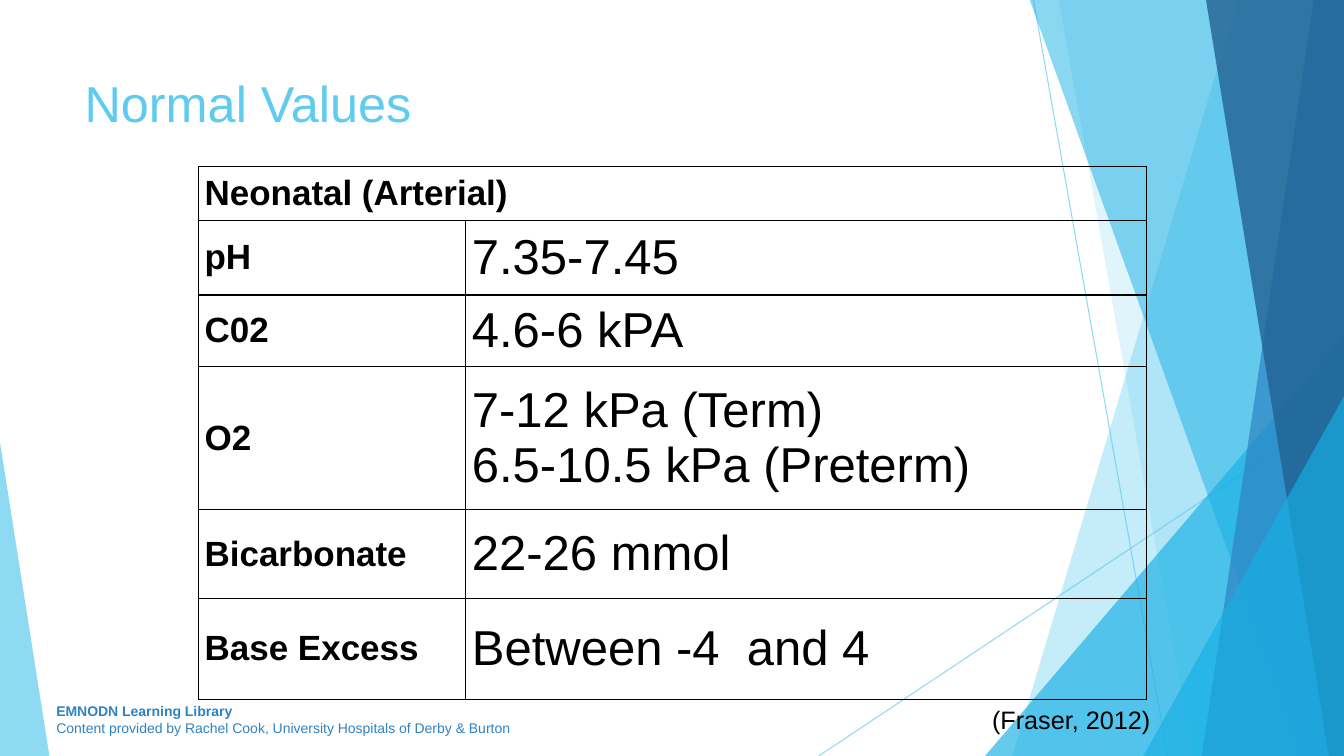
from lxml import etree
from pptx import Presentation
from pptx import util as u
from pptx.dml.color import RGBColor
from pptx.enum import shapes, text
from pptx.oxml import ns

WIDE, HIGH = 13.33, 7.5
SKY, CYAN, BLUE, NAVY, BLACK = "5FCBEF", "17B0E4", "2E83C3", "226292", "000000"
VALUES = [
    ("pH", "7.35-7.45", 0.74),
    ("C02", "4.6-6 kPA", 0.71),
    ("O2", "7-12 kPa (Term)\n6.5-10.5 kPa (Preterm)", 1.42),
    ("Bicarbonate", "22-26 mmol", 0.88),
    ("Base Excess", "Between -4  and 4", 1),
]


def color(code):
    """Turn a hex string into a colour."""
    return RGBColor.from_string(code)


def fade(part, alpha):
    """Make the colour inside a fill or line partly clear."""
    for node in part.iter(ns.qn("a:srgbClr")):
        etree.SubElement(node, ns.qn("a:alpha"), val=str(alpha * 1000))


def paint(shape, code, alpha):
    """Give a shape a partly clear fill without line or shadow."""
    shape.shadow.inherit = False
    shape.fill.solid()
    shape.fill.fore_color.rgb = color(code)
    shape.line.fill.background()
    fade(shape.fill._xPr, alpha)


def ray(slide, start, end):
    """Draw a thin pale line."""
    ends = [u.Inches(v) for v in start + end]
    line = slide.shapes.add_connector(shapes.MSO_CONNECTOR.STRAIGHT, *ends)
    line.line.color.rgb = color(SKY)
    line.line.width = u.Pt(0.75)
    fade(line.line._ln, 70)
    etree.SubElement(line._element.spPr, ns.qn("a:effectLst"))


def facet(slide, top, base, code, alpha):
    """Fill the area from a slanted edge to the right side of the slide."""
    points = [(top, -0.01), (WIDE, -0.01), (WIDE, HIGH), (base, HIGH)]
    points = [(u.Inches(x), u.Inches(y)) for x, y in points]
    form = slide.shapes.build_freeform(*points[0])
    form.add_line_segments(points[1:], close=True)
    paint(form.convert_to_shape(), code, alpha)


def wedge(slide, left, wide, high, tip, code, alpha):
    """Stand a triangle on the lower edge of the slide."""
    box = [u.Inches(v) for v in (left, HIGH - high, wide, high)]
    shape = slide.shapes.add_shape(shapes.MSO_SHAPE.ISOSCELES_TRIANGLE, *box)
    shape.adjustments[0] = tip
    paint(shape, code, alpha)


def backdrop(slide):
    """Layer the lines and facets behind the content."""
    ray(slide, (10.25, 0), (11.58, HIGH))
    ray(slide, (WIDE, 4.03), (8.12, HIGH))
    facet(slide, 12.28, 10.04, SKY, 36)
    facet(slide, 10.5, 11.83, SKY, 20)
    wedge(slide, 9.77, 3.56, 4.17, 1, CYAN, 66)
    facet(slide, 10.21, 12.91, CYAN, 50)
    facet(slide, 13.03, 11.92, BLUE, 70)
    facet(slide, 11.96, 13.18, NAVY, 80)
    wedge(slide, 11.34, 1.99, 3.57, 1, CYAN, 66)
    wedge(slide, 0, 0.49, 3.11, 0, SKY, 70)


def write(para, words, size, code=BLACK, bold=False):
    """Put formatted words into a paragraph."""
    para.text = words
    for run in para.runs:
        run.font.name = "Arial"
        run.font.size = u.Pt(size)
        run.font.bold = bold
        run.font.color.rgb = color(code)


def label(slide, box, lines, wrap=True, **style):
    """Add a text box; the first line may be bold."""
    frame = slide.shapes.add_textbox(*[u.Inches(v) for v in box]).text_frame
    frame.word_wrap = wrap
    for i, (words, bold) in enumerate(lines):
        para = frame.add_paragraph() if i else frame.paragraphs[0]
        write(para, words, bold=bold, **style)
    return frame


def inset(part):
    """Set narrow margins and centre the text vertically."""
    part.margin_left = part.margin_right = u.Inches(0.06)
    part.margin_top = part.margin_bottom = u.Inches(0.06)
    part.vertical_anchor = text.MSO_ANCHOR.MIDDLE


def border(cell):
    """Outline a clear cell in black."""
    cell.fill.background()
    props = cell._tc.get_or_add_tcPr()
    for i, side in enumerate("LRTB"):
        line = etree.Element(ns.qn("a:ln" + side), w=str(u.Pt(1)))
        fill = etree.SubElement(line, ns.qn("a:solidFill"))
        etree.SubElement(fill, ns.qn("a:srgbClr"), val=BLACK)
        props.insert(i, line)


def chart(slide, left, top, wide):
    """Build the table of normal values."""
    highs = [0.5] + [row[2] for row in VALUES]
    box = [u.Inches(v) for v in (left, top, wide, sum(highs))]
    grid = slide.shapes.add_table(len(highs), 2, *box).table
    grid.first_row = grid.horz_banding = False
    for col, size in zip(grid.columns, (2.65, wide - 2.65)):
        col.width = u.Inches(size)
    for row, high in zip(grid.rows, highs):
        row.height = u.Inches(high)
    for cell in grid.iter_cells():
        inset(cell)
        border(cell)
    grid.cell(0, 0).merge(grid.cell(0, 1))
    head = grid.cell(0, 0).text_frame.paragraphs[0]
    write(head, "Neonatal (Arterial)", 25, bold=True)
    for i, (name, value, _) in enumerate(VALUES, 1):
        write(grid.cell(i, 0).text_frame.paragraphs[0], name, 25, bold=True)
        write(grid.cell(i, 1).text_frame.paragraphs[0], value, 35)


def main():
    """Build and save the slide."""
    deck = Presentation()
    deck.slide_width, deck.slide_height = u.Inches(WIDE), u.Inches(HIGH)
    slide = deck.slides.add_slide(deck.slide_layouts[6])
    backdrop(slide)
    label(slide, (0.74, 0.67, 9.4, 1.44), [("Normal Values", False)],
          size=36, code=SKY)
    chart(slide, 1.97, 1.65, 9.4)
    cite = label(slide, (9.78, 6.94, 1.7, 0.39), [("(Fraser, 2012)", False)],
                 wrap=False, size=18)
    inset(cite)
    label(slide, (0.46, 6.92, 6.89, 0.4),
          [("EMNODN Learning Library", True),
           ("Content provided by Rachel Cook, "
            "University Hospitals of Derby & Burton", False)],
          size=10, code=BLUE)
    deck.save("out.pptx")


if __name__ == "__main__":
    main()
